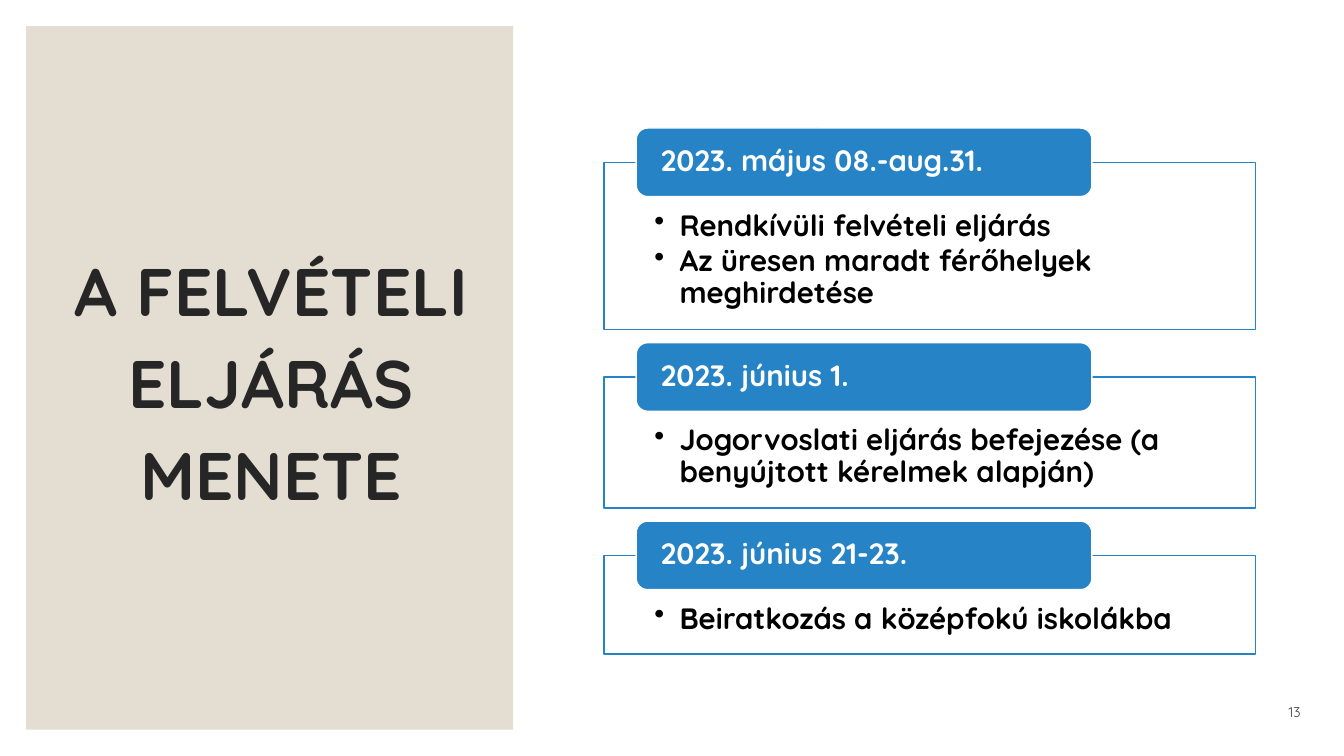
from dataclasses import dataclass

from lxml import etree
from pptx import Presentation
from pptx.dml.color import RGBColor as RGB
from pptx.enum.shapes import MSO_SHAPE as Shape
from pptx.enum.text import MSO_ANCHOR as Anchor, MSO_AUTO_SIZE as AutoSize, PP_ALIGN as Align
from pptx.oxml.ns import qn
from pptx.util import Emu, Pt

PX = 9144  # EMU per px, 100 px to the inch


@dataclass(frozen=True)
class Theme:
    font: str = "Quicksand"
    white: RGB = RGB(0xFF, 0xFF, 0xFF)
    black: RGB = RGB(0, 0, 0)
    panel: RGB = RGB(0xE3, 0xDE, 0xD1)
    accent: RGB = RGB(0x26, 0x83, 0xC6)
    title: RGB = RGB(0x26, 0x26, 0x26)
    muted: RGB = RGB(0x40, 0x40, 0x40)
    title_size: int = 48
    text_size: int = 21
    number_size: int = 10


THEME = Theme()

# Date, what happens, frame height
STEPS = [
    ("2023. május 08.-aug.31.",
     ["Rendkívüli felvételi eljárás", "Az üresen maradt férőhelyek meghirdetése"], 166),
    ("2023. június 1.",
     ["Jogorvoslati eljárás befejezése (a benyújtott kérelmek alapján)"], 130),
    ("2023. június 21-23.", ["Beiratkozás a középfokú iskolákba"], 98),
]
FIRST_TOP, STEP_GAP = 161, 47


def px(*lengths):
    return [Emu(n * PX) for n in lengths]


def add_box(slide, kind, box, fill, line=None):
    sp = slide.shapes.add_shape(kind, *px(*box))
    sp.shadow.inherit = False
    sp.fill.solid()
    sp.fill.fore_color.rgb = fill
    if line is None:
        sp.line.fill.background()
    else:
        sp.line.color.rgb = line
        sp.line.width = Pt(1)
    return sp


def set_frame(tf, insets, anchor):
    tf.word_wrap = True
    tf.auto_size = AutoSize.NONE
    tf.vertical_anchor = anchor
    tf.margin_left, tf.margin_top, tf.margin_right, tf.margin_bottom = px(*insets)


def write(p, text, size, color, bold=True, align=Align.LEFT, spacing=0.9):
    p.text = text
    p.alignment = align
    p.line_spacing = spacing
    p.font.name = THEME.font
    p.font.size = Pt(size)
    p.font.bold = bold
    p.font.color.rgb = color


def add_bullet(p):
    pPr = p._p.get_or_add_pPr()
    pPr.set("marL", str(25 * PX))
    pPr.set("indent", str(-25 * PX))
    # Bullet elements precede the default run properties
    bullet = etree.Element(qn("a:buChar"), char="•")
    pPr.find(qn("a:defRPr")).addprevious(bullet)


def add_title(slide, text):
    panel = add_box(slide, Shape.RECTANGLE, (26, 26, 483, 698), THEME.panel)
    title = slide.shapes.title
    title.element.addprevious(panel.element)  # panel goes behind the title
    title.left, title.top, title.width, title.height = px(63, 61, 412, 624)
    set_frame(title.text_frame, (0, 0, 0, 0), Anchor.MIDDLE)
    write(title.text_frame.paragraphs[0], text, THEME.title_size, THEME.title,
          align=Align.CENTER, spacing=1.14)


def add_step(slide, top, date, items, height):
    # Outlined frame with the list
    frame = add_box(slide, Shape.RECTANGLE, (599, top, 646, height), THEME.white, THEME.accent)
    color = frame.fill._xPr.find(qn("a:solidFill"))[0]
    etree.SubElement(color, qn("a:alpha"), val="90000")
    tf = frame.text_frame
    set_frame(tf, (50, 48, 50, 16), Anchor.TOP)
    for i, item in enumerate(items):
        p = tf.add_paragraph() if i else tf.paragraphs[0]
        write(p, item, THEME.text_size, THEME.black)
        p.space_after = Pt(3)
        add_bullet(p)

    # Date tab over the top edge
    tab = add_box(slide, Shape.ROUNDED_RECTANGLE, (631, top - 34, 452, 68),
                  THEME.accent, THEME.white)
    set_frame(tab.text_frame, (21, 0, 21, 0), Anchor.MIDDLE)
    write(tab.text_frame.paragraphs[0], date, THEME.text_size, THEME.white)


def add_page_number(slide, number):
    tf = slide.shapes.add_textbox(*px(1200, 690, 90, 30)).text_frame
    set_frame(tf, (10, 5, 0, 5), Anchor.BOTTOM)
    write(tf.paragraphs[0], number, THEME.number_size, THEME.muted,
          bold=False, align=Align.RIGHT, spacing=1.0)
    tf.paragraphs[0].space_after = Pt(6)


def main():
    prs = Presentation()
    prs.slide_width, prs.slide_height = px(1333, 750)
    slide = prs.slides.add_slide(prs.slide_layouts[5])
    slide.background.fill.solid()
    slide.background.fill.fore_color.rgb = THEME.white

    add_title(slide, "A FELVÉTELI ELJÁRÁS MENETE")
    top = FIRST_TOP
    for date, items, height in STEPS:
        add_step(slide, top, date, items, height)
        top += height + STEP_GAP
    add_page_number(slide, "13")

    prs.save("out.pptx")


if __name__ == "__main__":
    main()
